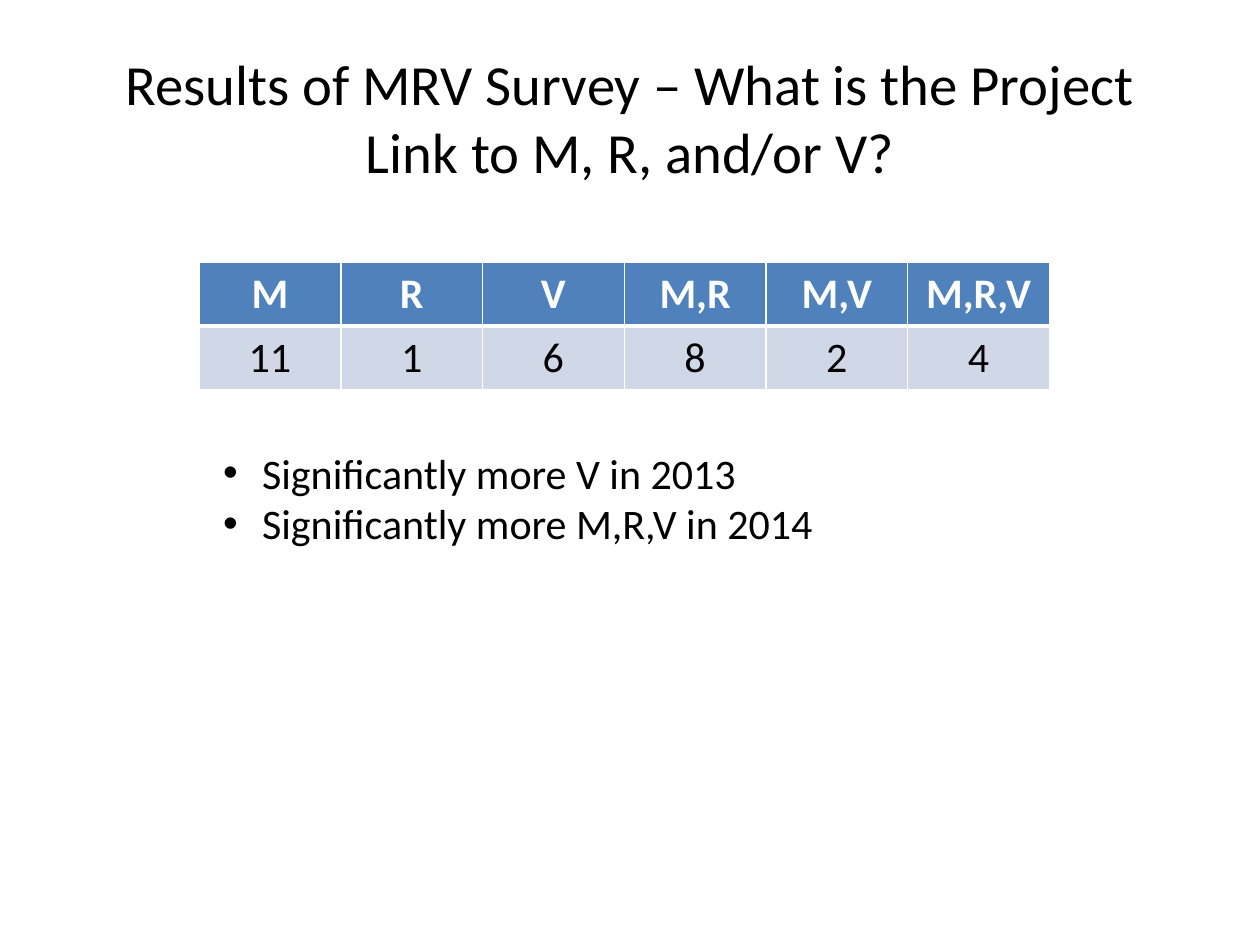
from dataclasses import dataclass

from lxml.etree import SubElement
from pptx import Presentation
from pptx.dml.color import RGBColor as RGB
from pptx.enum.text import MSO_ANCHOR as Anchor, MSO_AUTO_SIZE as AutoSize, PP_ALIGN as Align
from pptx.oxml.ns import qn
from pptx.util import Inches, Pt


@dataclass(frozen=True)
class Theme:
    font: str = "Calibri"
    ink: str = "000000"
    white: str = "FFFFFF"
    header: str = "4F81BD"
    band: str = "D0D8E8"
    title_size: float = 32.4
    text_size: float = 24
    thin: float = 1
    thick: float = 3


THEME = Theme()
TITLE = "Results of MRV Survey – What is the Project Link to M, R, and/or V?"
LINK_COUNTS = {"M": 11, "R": 1, "V": 6, "M,R": 8, "M,V": 2, "M,R,V": 4}
FINDINGS = ["Significantly more V in 2013", "Significantly more M,R,V in 2014"]


def place(shape, left, top, width, height):
    shape.left, shape.top = Inches(left), Inches(top)
    shape.width, shape.height = Inches(width), Inches(height)


def add_run(p, text, size, color=THEME.ink, bold=False):
    r = p.add_run()
    r.text = text
    r.font.name, r.font.size, r.font.bold = THEME.font, Pt(size), bold
    r.font.color.rgb = RGB.from_string(color)


def set_border(cell, side, width):
    ln = SubElement(cell._tc.get_or_add_tcPr(), qn(f"a:ln{side}"), w=str(Pt(width)))
    fill = SubElement(ln, qn("a:solidFill"))
    SubElement(fill, qn("a:srgbClr"), val=THEME.white)


def set_bullet(p, indent):
    pPr = p._p.get_or_add_pPr()
    pPr.set("marL", str(Inches(indent)))
    pPr.set("indent", str(-Inches(indent)))
    SubElement(pPr, qn("a:buFont"), typeface="Arial")
    SubElement(pPr, qn("a:buChar"), char="•")


def fill_title(shape, text):
    place(shape, 0.5, 0.3, 9, 1.25)
    tf = shape.text_frame
    tf.auto_size, tf.vertical_anchor = AutoSize.NONE, Anchor.MIDDLE
    p = tf.paragraphs[0]
    p.alignment = Align.CENTER
    add_run(p, text, THEME.title_size)


def fill_cell(cell, text, is_header):
    # The rule between header and counts is the thick one
    top, bottom = (THEME.thin, THEME.thick) if is_header else (THEME.thick, THEME.thin)
    for side, width in zip("LRTB", (THEME.thin, THEME.thin, top, bottom)):
        set_border(cell, side, width)
    cell.fill.solid()
    cell.fill.fore_color.rgb = RGB.from_string(THEME.header if is_header else THEME.band)
    p = cell.text_frame.paragraphs[0]
    p.alignment = Align.CENTER
    add_run(p, text, THEME.text_size, THEME.white if is_header else THEME.ink, is_header)


def add_count_table(s, counts):
    rows = [list(counts), [str(n) for n in counts.values()]]
    table = s.shapes.add_table(len(rows), len(counts), Inches(1.58), Inches(2.08),
                               Inches(6.75), Inches(1)).table
    for i, row in enumerate(rows):
        for j, text in enumerate(row):
            fill_cell(table.cell(i, j), text, is_header=i == 0)


def fill_list(shape, items):
    place(shape, 1.67, 3.5, 7.33, 0.91)
    tf = shape.text_frame
    tf.auto_size, tf.vertical_anchor = AutoSize.NONE, Anchor.TOP
    for i, item in enumerate(items):
        p = tf.add_paragraph() if i else tf.paragraphs[0]
        p.space_before = Pt(0)
        set_bullet(p, 0.31)
        add_run(p, item, THEME.text_size)


def main():
    prs = Presentation()
    prs.slide_width, prs.slide_height = Inches(10), Inches(7.5)
    s = prs.slides.add_slide(prs.slide_layouts[1])
    # Heading
    fill_title(s.shapes.title, TITLE)
    # Project counts by link
    add_count_table(s, LINK_COUNTS)
    # Findings
    fill_list(s.placeholders[1], FINDINGS)
    prs.save("out.pptx")


if __name__ == "__main__":
    main()
